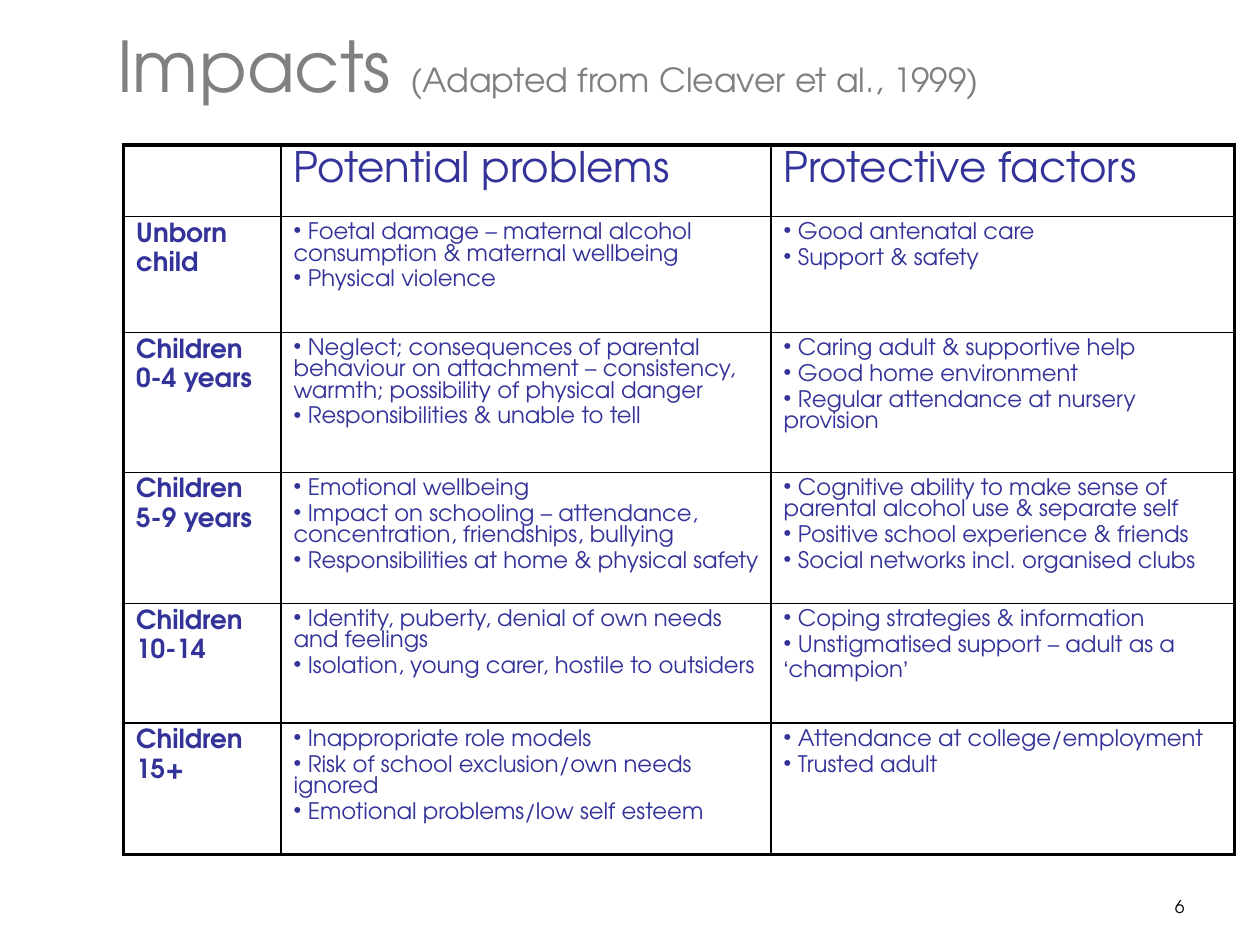
from dataclasses import dataclass

from lxml.etree import SubElement
from pptx import Presentation
from pptx.dml.color import RGBColor
from pptx.enum.text import MSO_ANCHOR, MSO_AUTO_SIZE, PP_ALIGN
from pptx.oxml.ns import qn
from pptx.util import Inches, Pt


@dataclass(frozen=True)
class Theme:
    font: str = "TeX Gyre Adventor"
    quote_font: str = "Arial"
    title_color: str = "808080"
    table_color: str = "333399"
    black: str = "000000"
    title_size: int = 40
    source_size: int = 19
    header_size: int = 24
    age_size: int = 15
    body_size: int = 13
    number_size: int = 10
    outer_line: float = 2.25
    inner_line: float = 1


@dataclass(frozen=True)
class AgeGroup:
    age: tuple[str, ...]
    problems: tuple[str, ...]
    protections: tuple[str, ...]
    height: float


THEME = Theme()
COLUMN_WIDTHS = (1.25, 3.89, 3.68)
HEADER_HEIGHT = 0.57
HEADERS = ("", "Potential problems", "Protective factors")
AGE_GROUPS = (
    AgeGroup(
        ("Unborn", "child"),
        ("Foetal damage – maternal alcohol consumption & maternal wellbeing",
         "Physical violence"),
        ("Good antenatal care", "Support & safety"),
        0.92,
    ),
    AgeGroup(
        ("Children", "0-4 years"),
        ("Neglect; consequences of parental behaviour on attachment – consistency, "
         "warmth; possibility of physical danger",
         "Responsibilities & unable to tell"),
        ("Caring adult & supportive help", "Good home environment",
         "Regular attendance at nursery provision"),
        1.11,
    ),
    AgeGroup(
        ("Children", "5-9 years"),
        ("Emotional wellbeing",
         "Impact on schooling – attendance, concentration, friendships, bullying",
         "Responsibilities at home & physical safety"),
        ("Cognitive ability to make sense of parental alcohol use & separate self",
         "Positive school experience & friends",
         "Social networks incl. organised clubs"),
        0.92,
    ),
    AgeGroup(
        ("Children", "10-14"),
        ("Identity, puberty, denial of own needs and feelings",
         "Isolation, young carer, hostile to outsiders"),
        ("Coping strategies & information",
         "Unstigmatised support – adult as a ‘champion’"),
        0.95,
    ),
    AgeGroup(
        ("Children", "15+"),
        ("Inappropriate role models",
         "Risk of school exclusion/own needs ignored",
         "Emotional problems/low self esteem"),
        ("Attendance at college/employment", "Trusted adult"),
        0.87,
    ),
)


def add_text(paragraph, text: str, *, size: float, color: str,
             bold: bool = False, font: str = THEME.font) -> None:
    run = paragraph.add_run()
    run.text = text
    run.font.name = font
    run.font.size = Pt(size)
    run.font.bold = bold
    run.font.color.rgb = RGBColor.from_string(color)


def split_quotes(text: str) -> list[str]:
    """Separate curly quotes from the words, as they take their own font."""
    for quote in "‘’":
        text = text.replace(quote, f"\n{quote}\n")
    return [part for part in text.split("\n") if part]


def add_bullet(paragraph) -> None:
    properties = paragraph._p.get_or_add_pPr()
    properties.set("marL", "0")
    properties.set("indent", "0")
    SubElement(properties, qn("a:buChar")).set("char", "•")


def fill_cell(cell, lines: tuple[str, ...], *, size: float,
              bold: bool = False, bulleted: bool = False) -> None:
    for index, line in enumerate(lines):
        frame = cell.text_frame
        paragraph = frame.add_paragraph() if index else frame.paragraphs[0]
        if index:
            paragraph.space_before = Pt(0.2 * size)
        if bulleted:
            add_bullet(paragraph)
            line = f" {line}"
        for part in split_quotes(line):
            font = THEME.quote_font if part in "‘’" else THEME.font
            add_text(paragraph, part, size=size, color=THEME.table_color,
                     bold=bold, font=font)


def style_cell(cell, outer_sides: dict[str, bool]) -> None:
    """Draw heavy lines on the sides that lie on the table's edge."""
    properties = cell._tc.get_or_add_tcPr()
    for side, is_outer in outer_sides.items():
        width = THEME.outer_line if is_outer else THEME.inner_line
        line = SubElement(properties, qn(f"a:ln{side}"), w=str(Pt(width)))
        fill = SubElement(line, qn("a:solidFill"))
        SubElement(fill, qn("a:srgbClr"), val=THEME.black)
    cell.fill.background()


def add_title(slide) -> None:
    title = slide.shapes.title
    title.left, title.top = Inches(0.83), Inches(0)
    title.width, title.height = Inches(8.98), Inches(1.02)
    frame = title.text_frame
    frame.auto_size = MSO_AUTO_SIZE.NONE
    frame.vertical_anchor = MSO_ANCHOR.MIDDLE
    paragraph = frame.paragraphs[0]
    paragraph.alignment = PP_ALIGN.LEFT
    add_text(paragraph, "Impacts ", size=THEME.title_size, color=THEME.title_color)
    add_text(paragraph, "(Adapted from Cleaver et al., 1999)",
             size=THEME.source_size, color=THEME.title_color)


def add_impacts_table(slide) -> None:
    heights = (HEADER_HEIGHT, *(group.height for group in AGE_GROUPS))
    table = slide.shapes.add_table(
        len(heights), len(COLUMN_WIDTHS), Inches(0.98), Inches(1.15),
        Inches(sum(COLUMN_WIDTHS)), Inches(sum(heights))).table
    table.first_row = table.horz_banding = False
    for column, width in zip(table.columns, COLUMN_WIDTHS):
        column.width = Inches(width)
    for row, height in zip(table.rows, heights):
        row.height = Inches(height)

    last_row, last_column = len(heights) - 1, len(COLUMN_WIDTHS) - 1
    for row in range(len(heights)):
        for column in range(len(COLUMN_WIDTHS)):
            style_cell(table.cell(row, column), {
                "L": column == 0, "R": column == last_column,
                "T": row == 0, "B": row == last_row})

    for column, header in enumerate(HEADERS):
        if header:
            fill_cell(table.cell(0, column), (header,), size=THEME.header_size)
    for row, group in enumerate(AGE_GROUPS, start=1):
        fill_cell(table.cell(row, 0), group.age, size=THEME.age_size, bold=True)
        for column, lines in enumerate((group.problems, group.protections), start=1):
            fill_cell(table.cell(row, column), lines,
                      size=THEME.body_size, bulleted=True)


def add_slide_number(slide) -> None:
    box = slide.shapes.add_textbox(Inches(7.17), Inches(7.06), Inches(2.33), Inches(0.29))
    box.text_frame.word_wrap = True
    paragraph = box.text_frame.paragraphs[0]
    paragraph.alignment = PP_ALIGN.RIGHT
    add_text(paragraph, "6", size=THEME.number_size, color=THEME.black)


def main() -> None:
    presentation = Presentation()
    presentation.slide_width, presentation.slide_height = Inches(10), Inches(7.5)
    slide = presentation.slides.add_slide(presentation.slide_layouts[5])
    add_slide_number(slide)
    add_title(slide)
    add_impacts_table(slide)
    presentation.save("out.pptx")


if __name__ == "__main__":
    main()
